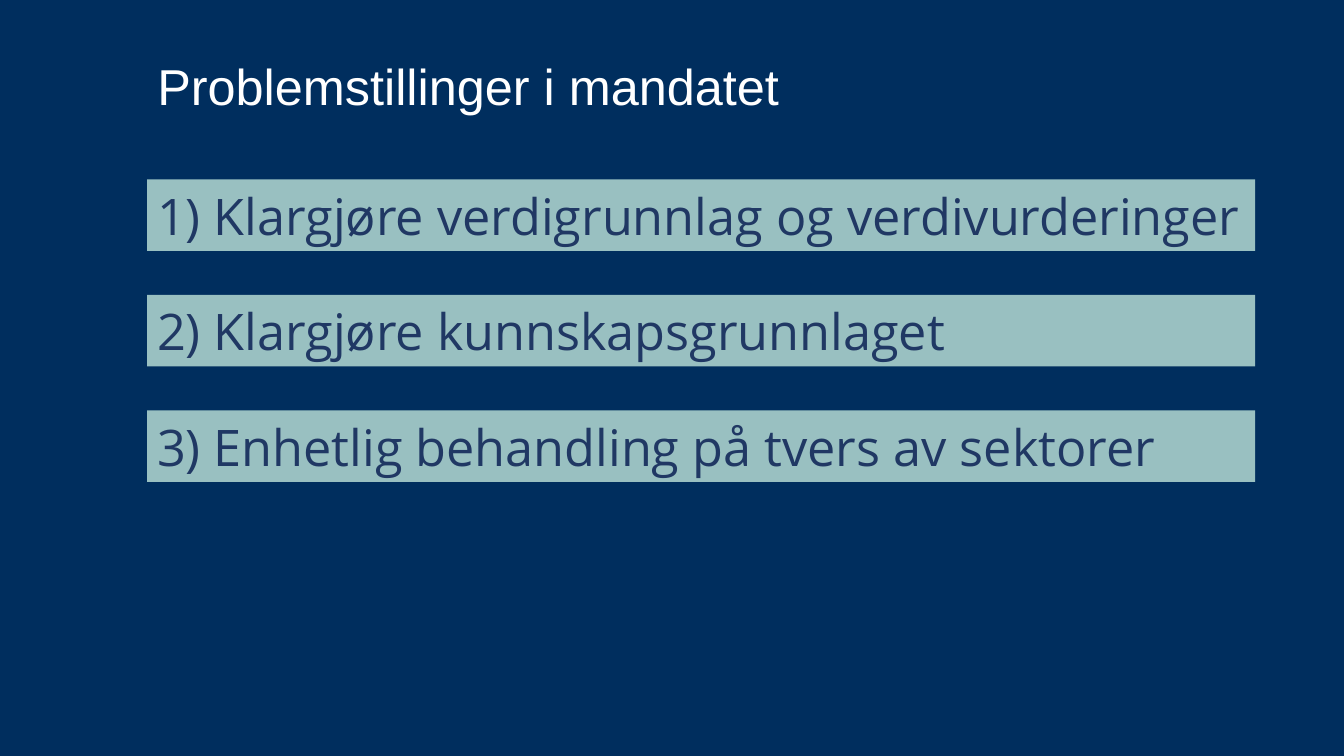
from pptx import Presentation
from pptx.dml.color import RGBColor
from pptx.enum.shapes import MSO_SHAPE
from pptx.enum.text import MSO_ANCHOR, PP_ALIGN
from pptx.util import Inches, Pt

NAVY, TEAL, INK, WHITE = "002E5E", "99C0C1", "203864", "FFFFFF"
ISSUES = [
    "1) Klargjøre verdigrunnlag og verdivurderinger",
    "2) Klargjøre kunnskapsgrunnlaget",
    "3) Enhetlig behandling på tvers av sektorer",
]


def paint(color_format, color):
    color_format.rgb = RGBColor.from_string(color)


def set_text(sp, text, font, color):
    tf = sp.text_frame
    tf.text = text
    tf.word_wrap = True
    tf.vertical_anchor = MSO_ANCHOR.MIDDLE
    p = tf.paragraphs[0]
    p.alignment = PP_ALIGN.LEFT
    p.font.name, p.font.size = font, Pt(36)
    paint(p.font.color, color)


def add_title(slide, text, left, top, width, height):
    sp = slide.shapes.title
    sp.left, sp.top = Inches(left), Inches(top)
    sp.width, sp.height = Inches(width), Inches(height)
    set_text(sp, text, "Arial", WHITE)


def add_issue_bars(slide, issues, left, top, width, bar_height, pitch):
    for i, issue in enumerate(issues):
        sp = slide.shapes.add_shape(
            MSO_SHAPE.RECTANGLE, Inches(left), Inches(top + i * pitch),
            Inches(width), Inches(bar_height))
        sp.shadow.inherit = False
        sp.fill.solid()
        paint(sp.fill.fore_color, TEAL)
        sp.line.fill.background()
        set_text(sp, issue, "Open Sans", INK)
        sp.text_frame.margin_top = sp.text_frame.margin_bottom = 0


def main():
    prs = Presentation()
    prs.slide_width, prs.slide_height = Inches(13.33), Inches(7.5)
    slide = prs.slides.add_slide(prs.slide_layouts[5])

    # Background
    slide.background.fill.solid()
    paint(slide.background.fill.fore_color, NAVY)

    # Heading and the three issues of the mandate
    add_title(slide, "Problemstillinger i mandatet", 1.46, 0.12, 8.49, 1.45)
    add_issue_bars(slide, ISSUES, 1.46, 1.78, 10.99, 0.71, 1.145)

    prs.save("out.pptx")


if __name__ == "__main__":
    main()
